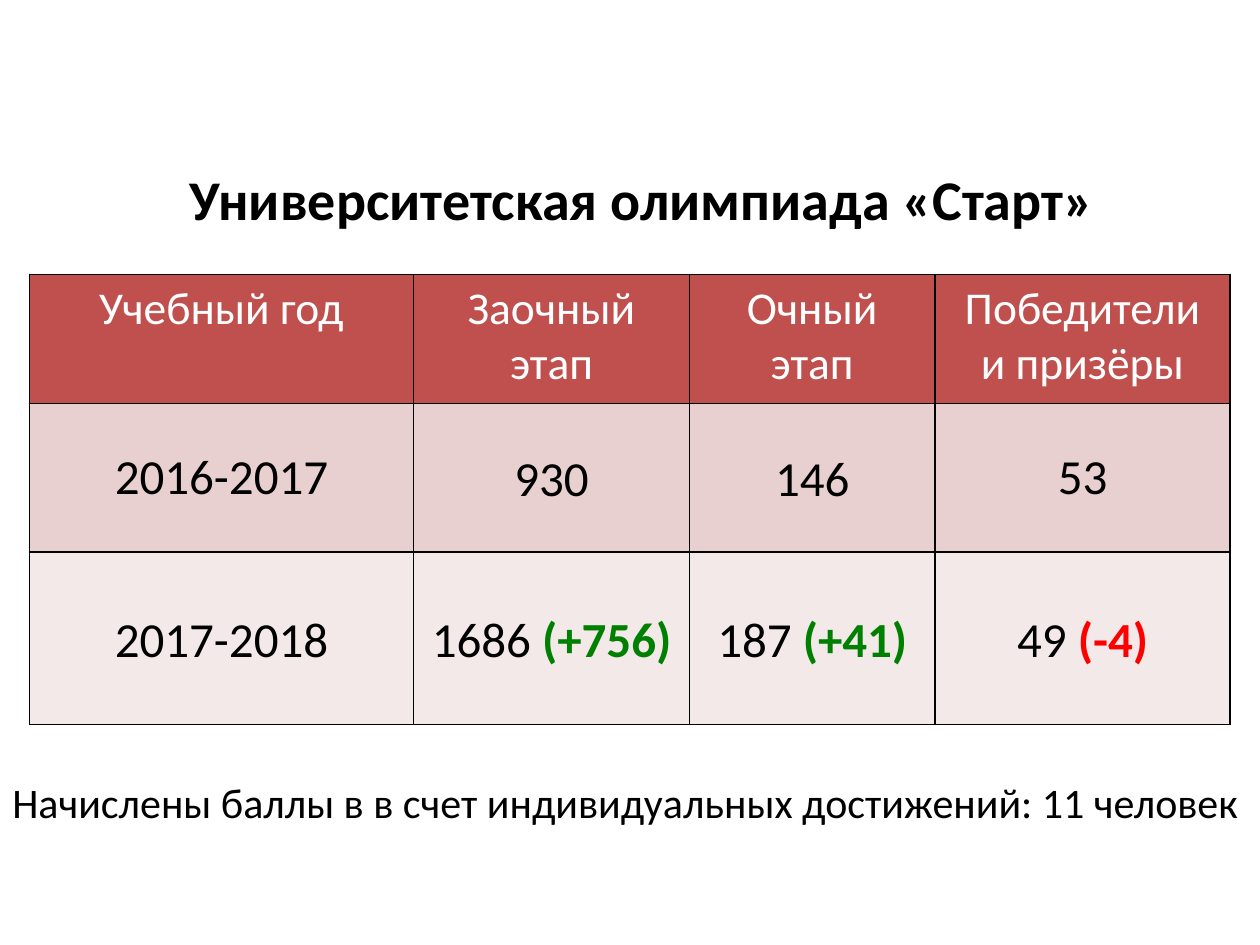
from lxml.etree import SubElement
from pptx import Presentation
from pptx.dml.color import RGBColor
from pptx.enum.text import MSO_ANCHOR as Anchor, PP_ALIGN as Align
from pptx.oxml.ns import qn
from pptx.util import Cm, Pt

BLACK = RGBColor(0x00, 0x00, 0x00)
WHITE = RGBColor(0xFF, 0xFF, 0xFF)
RED = RGBColor(0xFF, 0x00, 0x00)
GREEN = RGBColor(0x00, 0x80, 0x00)
HEADER_FILL = RGBColor(0xC0, 0x50, 0x4D)
ROW_FILLS = [RGBColor(0xE8, 0xD0, 0xD0), RGBColor(0xF4, 0xE9, 0xE9)]

HEADERS = ["Учебный год", "Заочный этап", "Очный этап", "Победители и призёры"]
# Each value is followed by its change against the previous year, if any
RESULTS = [
    [("2016-2017",), ("930",), ("146",), ("53",)],
    [("2017-2018",), ("1686 ", "(+756)"), ("187 ", "(+41)"), ("49 ", "(-4)")],
]


class SlideBuilder:
    """Holds the text style and the current slide."""

    font = "Calibri"

    def __init__(self, prs):
        self.s = prs.slides.add_slide(prs.slide_layouts[5])

    def style(self, p, size, color=BLACK, bold=False, align=Align.CENTER):
        p.alignment = align
        f = p.font
        f.name, f.size, f.bold = self.font, Pt(size), bold
        f.color.rgb = color

    def title(self, text, left, top, width, height):
        sp = self.s.shapes.title
        sp.left, sp.top, sp.width, sp.height = left, top, width, height
        sp.text_frame.text = text
        sp.text_frame.vertical_anchor = Anchor.MIDDLE
        self.style(sp.text_frame.paragraphs[0], 32, bold=True)

    def note(self, text, left, top, width, height):
        tf = self.s.shapes.add_textbox(left, top, width, height).text_frame
        tf.word_wrap = True
        tf.text = text
        self.style(tf.paragraphs[0], 24, align=Align.LEFT)

    def table(self, left, top, col_widths, row_heights):
        table = self.s.shapes.add_table(
            len(row_heights), len(col_widths), left, top,
            sum(col_widths), sum(row_heights)).table
        for column, width in zip(table.columns, col_widths):
            column.width = width
        for row, height in zip(table.rows, row_heights):
            row.height = height
        return table

    def cell(self, cell, parts, size, color, fill):
        p = cell.text_frame.paragraphs[0]
        self.style(p, size, color)
        p.add_run().text = parts[0]
        for change in parts[1:]:
            r = p.add_run()
            r.text = change
            r.font.bold = True
            r.font.color.rgb = GREEN if "+" in change else RED
        self.borders(cell)
        cell.fill.solid()
        cell.fill.fore_color.rgb = fill
        return p

    def borders(self, cell):
        tc_pr = cell._tc.get_or_add_tcPr()
        for side in ("a:lnL", "a:lnR", "a:lnT", "a:lnB"):
            line = SubElement(tc_pr, qn(side), w=str(Pt(1)))
            fill = SubElement(line, qn("a:solidFill"))
            SubElement(fill, qn("a:srgbClr"), val=str(BLACK))


def main():
    prs = Presentation()
    prs.slide_width, prs.slide_height = Cm(25.4), Cm(19.05)
    b = SlideBuilder(prs)

    # Title
    b.title("Университетская олимпиада «Старт»",
            Cm(0.5), Cm(3.18), Cm(24.9), Cm(1.62))

    # Results table
    table = b.table(Cm(0.59), Cm(5.53),
                    [Cm(7.75), Cm(5.56), Cm(4.95), Cm(5.95)],
                    [Cm(2.6), Cm(3), Cm(3.48)])
    for col, text in enumerate(HEADERS):
        b.cell(table.cell(0, col), (text,), 26, WHITE, HEADER_FILL)
    for row, (values, fill) in enumerate(zip(RESULTS, ROW_FILLS), start=1):
        for col, parts in enumerate(values):
            cell = table.cell(row, col)
            p = b.cell(cell, parts, 28, BLACK, fill)
            cell.vertical_anchor = Anchor.MIDDLE
            is_stage = col in (1, 2)
            if is_stage:
                cell.margin_left = cell.margin_right = Cm(0.18)
                cell.margin_top = cell.margin_bottom = 0
            if is_stage or row == len(RESULTS):
                p.line_spacing = 1.07

    # Note under the table
    b.note("Начислены баллы в в счет индивидуальных достижений: 11 человек",
           Cm(0), Cm(15.52), Cm(25.4), Cm(1.27))

    prs.save("out.pptx")


if __name__ == "__main__":
    main()
